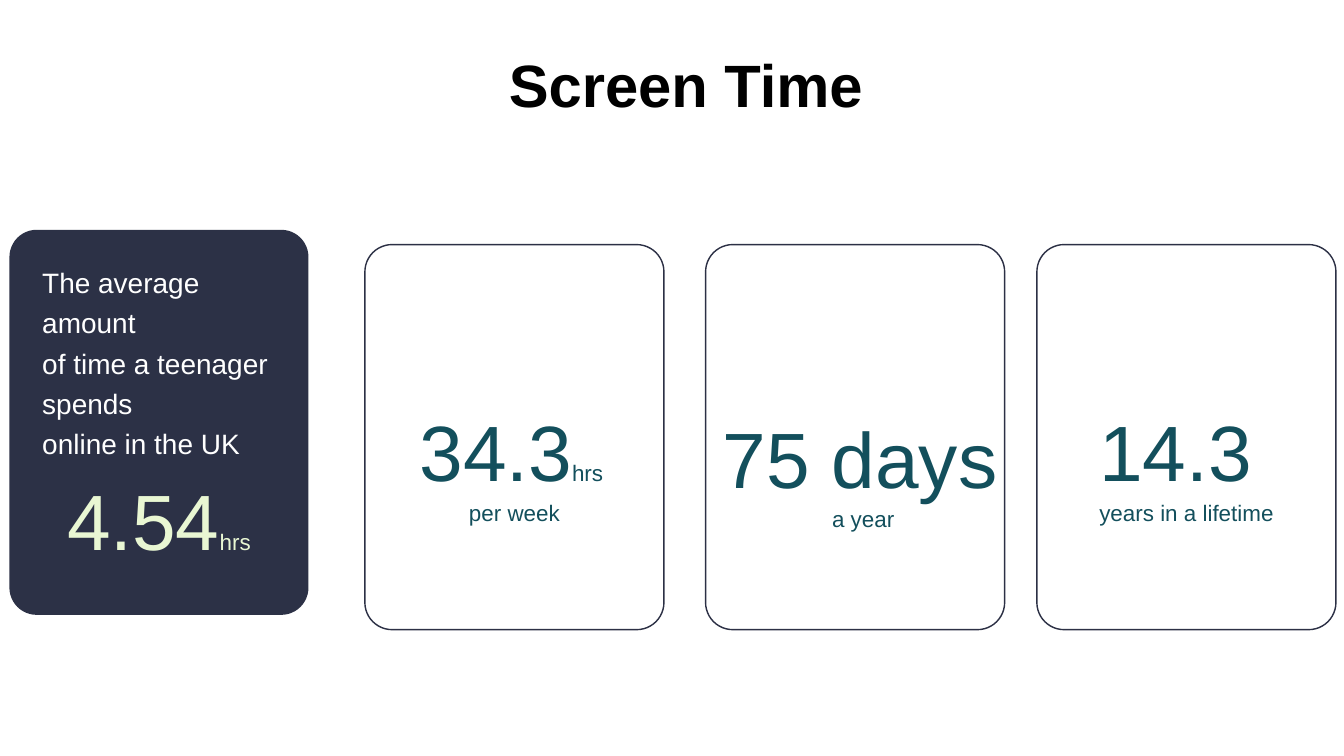
from dataclasses import dataclass

from pptx import Presentation
from pptx.dml.color import RGBColor
from pptx.enum.shapes import MSO_SHAPE
from pptx.enum.text import MSO_ANCHOR, MSO_AUTO_SIZE, PP_ALIGN
from pptx.util import Inches, Pt

ROUNDED = MSO_SHAPE.ROUNDED_RECTANGLE
LEFT, CENTER = PP_ALIGN.LEFT, PP_ALIGN.CENTER
TOP = MSO_ANCHOR.TOP
FIXED, GROW = MSO_AUTO_SIZE.NONE, MSO_AUTO_SIZE.SHAPE_TO_FIT_TEXT


@dataclass(frozen=True)
class Theme:
    font: str = "Arial"
    black: str = "000000"
    white: str = "FFFFFF"
    navy: str = "2C3146"
    outline: str = "2C3045"
    lime: str = "E9F7D3"
    teal: str = "134F5C"
    title: int = 64
    figure: int = 84
    intro: int = 30
    unit: int = 24


THEME = Theme()

# Content: a text is a list of paragraphs, a paragraph a list of (words, size)
TITLE = [[("Screen Time", THEME.title)]]
INTRO = [[(line, THEME.intro)] for line in (
    "The average amount", "of time a teenager spends", "online in the UK")]
DAILY = [[("4.54", THEME.figure), ("hrs", THEME.unit)]]
TOTALS = [
    [[("34.3", THEME.figure), ("hrs ", THEME.unit)], [("per week", THEME.unit)]],
    [[("75 days", THEME.figure), (" ", THEME.unit)], [("a year", THEME.unit)]],
    [[("14.3 ", THEME.figure)], [("years in a lifetime", THEME.unit)]],
]

# Layout in inches
SLIDE_W, SLIDE_H = 20, 11.25
CARD_W, CARD_H, CORNER = 4.45, 5.73, 0.405
DAILY_X, DAILY_Y = 0.14, 3.42
TOTAL_Y = 3.64
TOTAL_COLUMNS = [5.43, 10.5, 15.43]
TOTAL_SHIFTS = [(0, 0), (0.12, 0.1), (0, 0)]  # nudges of each total's text
FIGURE_DROP = 2.21  # from a card's top to its total


def write(shape, text, color, align=CENTER, spacing=1.04, bold=False, fit=FIXED):
    frame = shape.text_frame
    margins = dict.fromkeys(
        ("margin_left", "margin_top", "margin_right", "margin_bottom"), Inches(0.1))
    settings = {"word_wrap": True, "vertical_anchor": TOP, "auto_size": fit, **margins}
    for name, value in settings.items():
        setattr(frame, name, value)
    for index, pieces in enumerate(text):
        paragraph = frame.add_paragraph() if index else frame.paragraphs[0]
        paragraph.alignment, paragraph.line_spacing = align, spacing
        for words, size in pieces:
            run = paragraph.add_run()
            run.text = words
            for name, value in {"name": THEME.font, "size": Pt(size), "bold": bold}.items():
                setattr(run.font, name, value)
            run.font.color.rgb = RGBColor.from_string(color)


def add_text(slide, box, text, color, **style):
    write(slide.shapes.add_textbox(*map(Inches, box)), text, color, **style)


def add_card(slide, x, y, fill=None):
    card = slide.shapes.add_shape(ROUNDED, *map(Inches, (x, y, CARD_W, CARD_H)))
    card.adjustments[0] = CORNER / CARD_W
    card.shadow.inherit = False
    if fill:
        card.fill.solid()
        card.fill.fore_color.rgb = RGBColor.from_string(fill)
        card.line.fill.background()
    else:
        card.fill.background()
        card.line.color.rgb = RGBColor.from_string(THEME.outline)
        card.line.width = Pt(1.5)


def main():
    deck = Presentation()
    deck.slide_width, deck.slide_height = Inches(SLIDE_W), Inches(SLIDE_H)
    slide = deck.slides.add_slide(deck.slide_layouts[5])

    # Title
    heading = slide.shapes.title
    heading.left, heading.top, heading.width, heading.height = map(
        Inches, (4.33, 0.61, 11.75, 1.65))
    write(heading, TITLE, THEME.black, spacing=1.0, bold=True)

    # Daily average on the dark card
    add_card(slide, DAILY_X, DAILY_Y, THEME.navy)
    add_text(slide, (0.53, 3.75, 3.68, 1.99), INTRO, THEME.white, align=LEFT, spacing=1.2)
    add_text(slide, (DAILY_X, 6.87, CARD_W, 1.62), DAILY, THEME.lime, fit=GROW)

    # Totals on the outlined cards
    for x, (dx, dy), total in zip(TOTAL_COLUMNS, TOTAL_SHIFTS, TOTALS):
        add_card(slide, x, TOTAL_Y)
        add_text(slide, (x + dx, TOTAL_Y + FIGURE_DROP + dy, CARD_W, 2.08),
                 total, THEME.teal, fit=GROW)

    deck.save("out.pptx")


if __name__ == "__main__":
    main()
